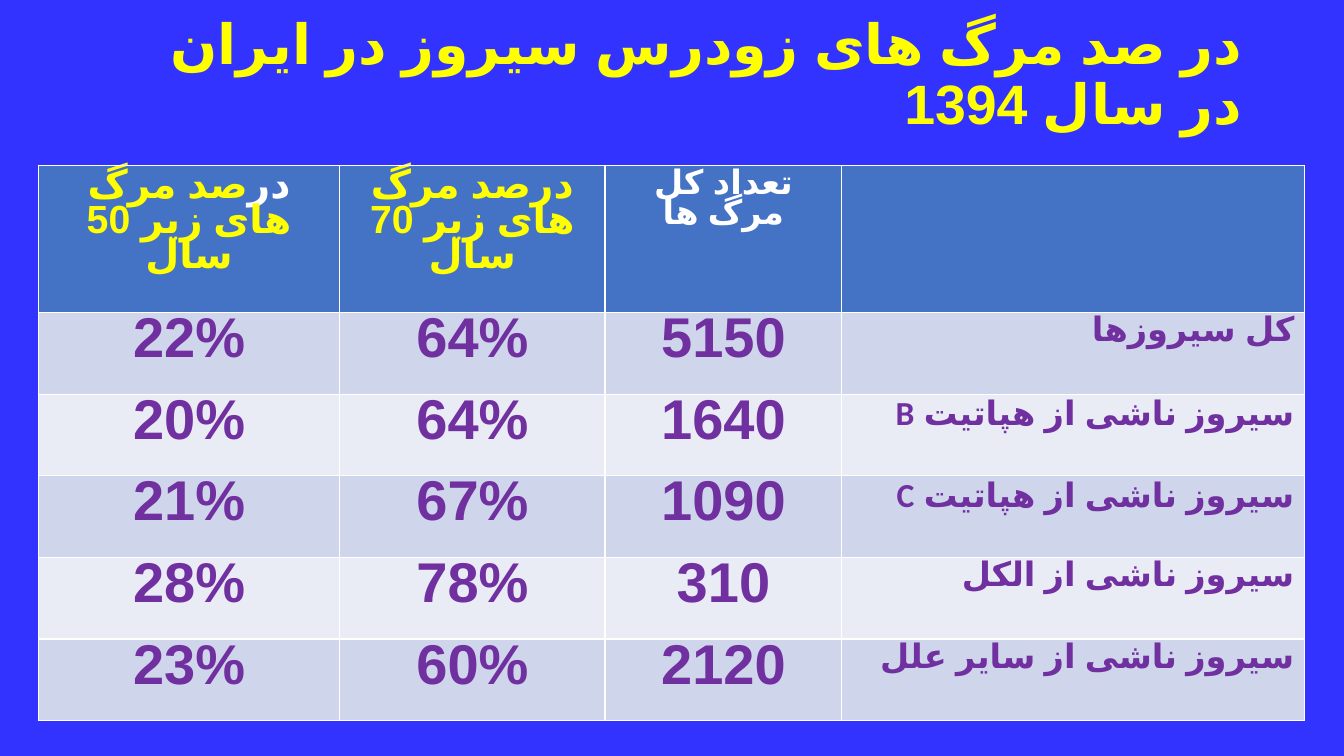
import pptx
import pptx.dml.color
import pptx.enum.text
import pptx.oxml
import pptx.oxml.ns
import pptx.util

Inches = pptx.util.Inches
Pt = pptx.util.Pt
Align = pptx.enum.text.PP_ALIGN
Anchor = pptx.enum.text.MSO_ANCHOR

COLORS = {
    "back": "3333FF", "title": "FFFF00", "white": "FFFFFF", "head": "4472C4",
    "dark": "CFD5EA", "light": "E9EBF5", "text": "7030A0",
}
HEADS = [
    ([("در", "white"), ("صد مرگ های زیر 50 سال", "title")], 28),
    ([("درصد مرگ های زیر 70 سال", "title")], 28),
    ([("تعداد کل مرگ ها", "white")], 24),
    ([], 24),
]
ROWS = [
    ("22%", "64%", "5150", "کل سیروزها"),
    ("20%", "64%", "1640", "سیروز ناشی از هپاتیت B"),
    ("21%", "67%", "1090", "سیروز ناشی از هپاتیت C"),
    ("28%", "78%", "310", "سیروز ناشی از الکل"),
    ("23%", "60%", "2120", "سیروز ناشی از سایر علل"),
]


def color(name):
    return pptx.dml.color.RGBColor.from_string(COLORS[name])


class Page:
    """Holds the style and the current slide."""

    def __init__(self, deck):
        self.font = "Calibri"
        self.script = "Arial"
        self.slide = deck.slides.add_slide(deck.slide_layouts[6])
        fill = self.slide.background.fill
        fill.solid()
        fill.fore_color.rgb = color("back")

    def text(self, frame, parts, size, align, space):
        para = frame.paragraphs[0]
        para.alignment = align
        para.line_spacing = space
        para.font.name = self.font
        para.font.size = Pt(size)
        para.font.bold = True
        para._p.get_or_add_pPr().set("rtl", "1")
        for words, tone in parts:
            run = para.add_run()
            run.text = words
            run.font.name = self.font
            run.font.size = Pt(size)
            run.font.bold = True
            run.font.color.rgb = color(tone)
            props = run._r.get_or_add_rPr()
            props.set("lang", "fa-IR")
            props.append(pptx.oxml.parse_xml(
                f'<a:cs {pptx.oxml.ns.nsdecls("a")} typeface="{self.script}"/>'))

    def title(self, words, left, top, width, height):
        box = self.slide.shapes.add_textbox(
            Inches(left), Inches(top), Inches(width), Inches(height))
        frame = box.text_frame
        frame.word_wrap = True
        frame.vertical_anchor = Anchor.MIDDLE
        self.text(frame, [(words, "title")], 39.6, Align.RIGHT, 0.9)

    def cell(self, cell, parts, size, align, fill):
        cell.fill.solid()
        cell.fill.fore_color.rgb = color(fill)
        self.text(cell.text_frame, parts, size, align, 0.8)
        props = cell._tc.get_or_add_tcPr()
        for place, side in enumerate(("lnL", "lnR", "lnT", "lnB")):
            props.insert(place, pptx.oxml.parse_xml(
                f'<a:{side} {pptx.oxml.ns.nsdecls("a")} w="{Pt(1)}"><a:solidFill>'
                f'<a:srgbClr val="{COLORS["white"]}"/></a:solidFill></a:{side}>'))

    def table(self, left, top, widths, heights):
        table = self.slide.shapes.add_table(
            len(heights), len(widths), Inches(left), Inches(top),
            Inches(sum(widths)), Inches(sum(heights))).table
        for col, width in zip(table.columns, widths):
            col.width = Inches(width)
        for row, height in zip(table.rows, heights):
            row.height = Inches(height)
        for col, (parts, size) in enumerate(HEADS):
            self.cell(table.cell(0, col), parts, size, Align.CENTER, "head")
        for row, texts in enumerate(ROWS, 1):
            fill = "dark" if row % 2 else "light"
            for col, words in enumerate(texts):
                last = col == len(texts) - 1
                size, align = (24, Align.RIGHT) if last else (40, Align.CENTER)
                self.cell(table.cell(row, col), [(words, "text")], size, align, fill)


def main():
    deck = pptx.Presentation()
    deck.slide_width = Inches(13.33)
    deck.slide_height = Inches(7.5)
    page = Page(deck)
    page.title("در صد مرگ های زودرس سیروز در ایران در سال 1394",
               0.92, 0.23, 11.5, 1.05)
    page.table(0.38, 1.64, [2.99, 2.63, 2.35, 4.59], [1.46] + [0.81] * len(ROWS))
    deck.save("out.pptx")


if __name__ == "__main__":
    main()
